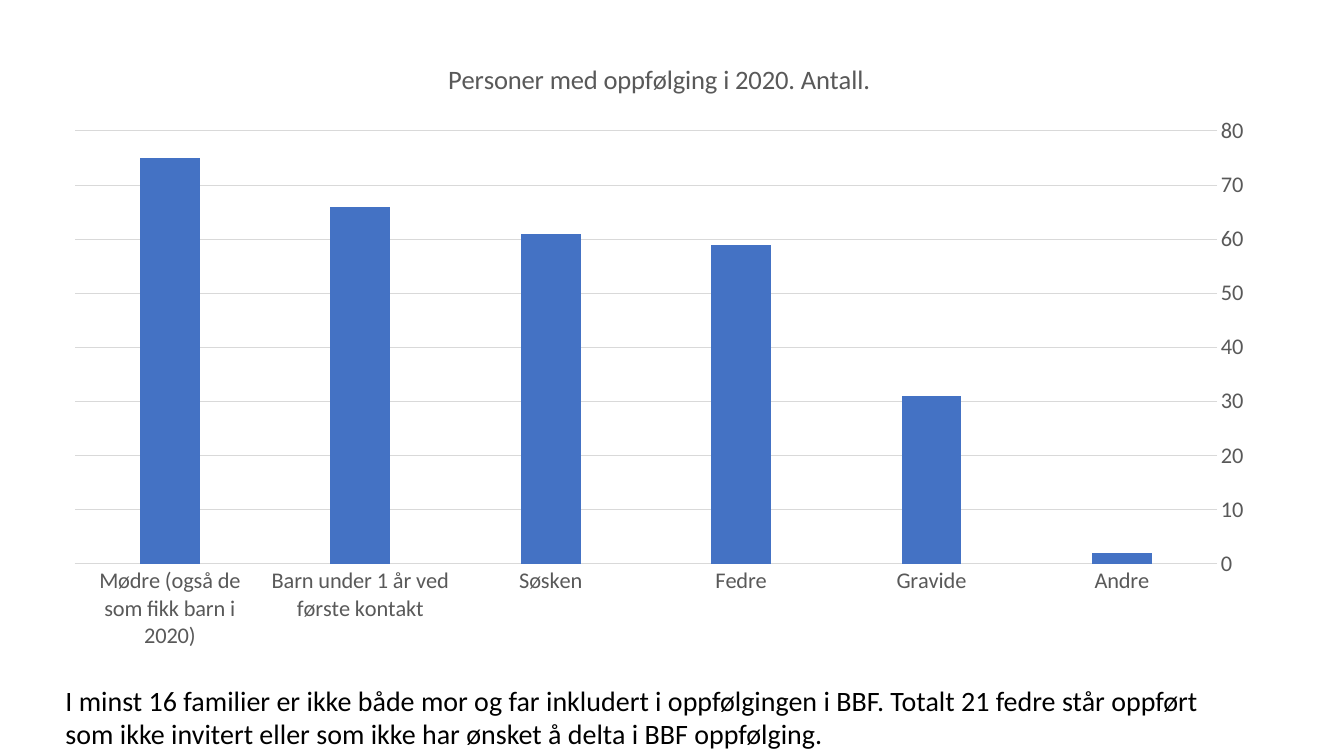
from typing import NamedTuple

from pptx import Presentation
from pptx import util as u
from pptx.chart.data import CategoryChartData
from pptx.dml.color import RGBColor
from pptx.enum import chart as ch, text as tx

FONT = "Calibri"
BLACK = RGBColor(0x00, 0x00, 0x00)
GREY = RGBColor(0x59, 0x59, 0x59)
GRID = RGBColor(0xD9, 0xD9, 0xD9)
BLUE = RGBColor(0x44, 0x72, 0xC4)


class Group(NamedTuple):
    label: str
    count: int


GROUPS = [
    Group("Andre", 2),
    Group("Gravide", 31),
    Group("Fedre", 59),
    Group("Søsken", 61),
    Group("Barn under 1 år ved første kontakt", 66),
    Group("Mødre (også de som fikk barn i 2020)", 75),
]
FAMILY_NOTE = [
    "I minst 16 familier er ikke både mor og far inkludert i oppfølgingen i BBF. Totalt 21 fedre står oppført",
    "som ikke invitert eller som ikke har ønsket å delta i BBF oppfølging.",
]


def style_font(font, size: float, color: RGBColor, bold: bool = False) -> None:
    font.name, font.size, font.bold = FONT, u.Pt(size), bold
    font.color.rgb = color


def style_line(line) -> None:
    line.color.rgb = GRID
    line.width = u.Pt(0.75)


def add_followup_chart(slide) -> None:
    data = CategoryChartData()
    data.categories = [group.label for group in GROUPS]
    data.add_series("Series 1", [group.count for group in GROUPS])
    followup = slide.shapes.add_chart(
        ch.XL_CHART_TYPE.COLUMN_CLUSTERED,
        u.Cm(1.27), u.Cm(0.97), u.Cm(30.68), u.Cm(15.72), data,
    ).chart
    style_font(followup.font, 16, BLACK)
    followup.has_legend = False

    # Chart title
    followup.has_title = True
    heading = followup.chart_title
    heading.include_in_layout = False
    run = heading.text_frame.paragraphs[0].add_run()
    run.text = "Personer med oppfølging i 2020. Antall."
    style_font(run.font, 19, GREY)

    # Columns
    plot = followup.plots[0]
    plot.gap_width, plot.overlap = 219, -27
    plot.vary_by_categories = False
    fill = plot.series[0].format.fill
    fill.solid()
    fill.fore_color.rgb = BLUE

    # Axes: reversed categories put the values on the right
    groups_axis, count_axis = followup.category_axis, followup.value_axis
    for axis in (groups_axis, count_axis):
        axis.major_tick_mark = axis.minor_tick_mark = ch.XL_TICK_MARK.NONE
        style_font(axis.tick_labels.font, 16, GREY)
    groups_axis.reverse_order = True
    style_line(groups_axis.format.line)
    count_axis.minimum_scale, count_axis.maximum_scale = 0, 80
    count_axis.major_unit = 10
    count_axis.format.line.fill.background()
    style_line(count_axis.major_gridlines.format.line)


def add_family_note(slide) -> None:
    note = slide.shapes.add_textbox(
        u.Cm(1.4), u.Cm(17.09), u.Cm(29.49), u.Cm(1.96)
    ).text_frame
    note.word_wrap = False
    note.auto_size = tx.MSO_AUTO_SIZE.SHAPE_TO_FIT_TEXT
    for index, sentence in enumerate(FAMILY_NOTE):
        paragraph = note.add_paragraph() if index else note.paragraphs[0]
        run = paragraph.add_run()
        run.text = sentence
        style_font(run.font, 20, BLACK)


def main() -> None:
    deck = Presentation()
    deck.slide_width, deck.slide_height = u.Cm(33.87), u.Cm(19.05)
    slide = deck.slides.add_slide(deck.slide_layouts[6])
    add_followup_chart(slide)
    add_family_note(slide)
    deck.save("out.pptx")


if __name__ == "__main__":
    main()
